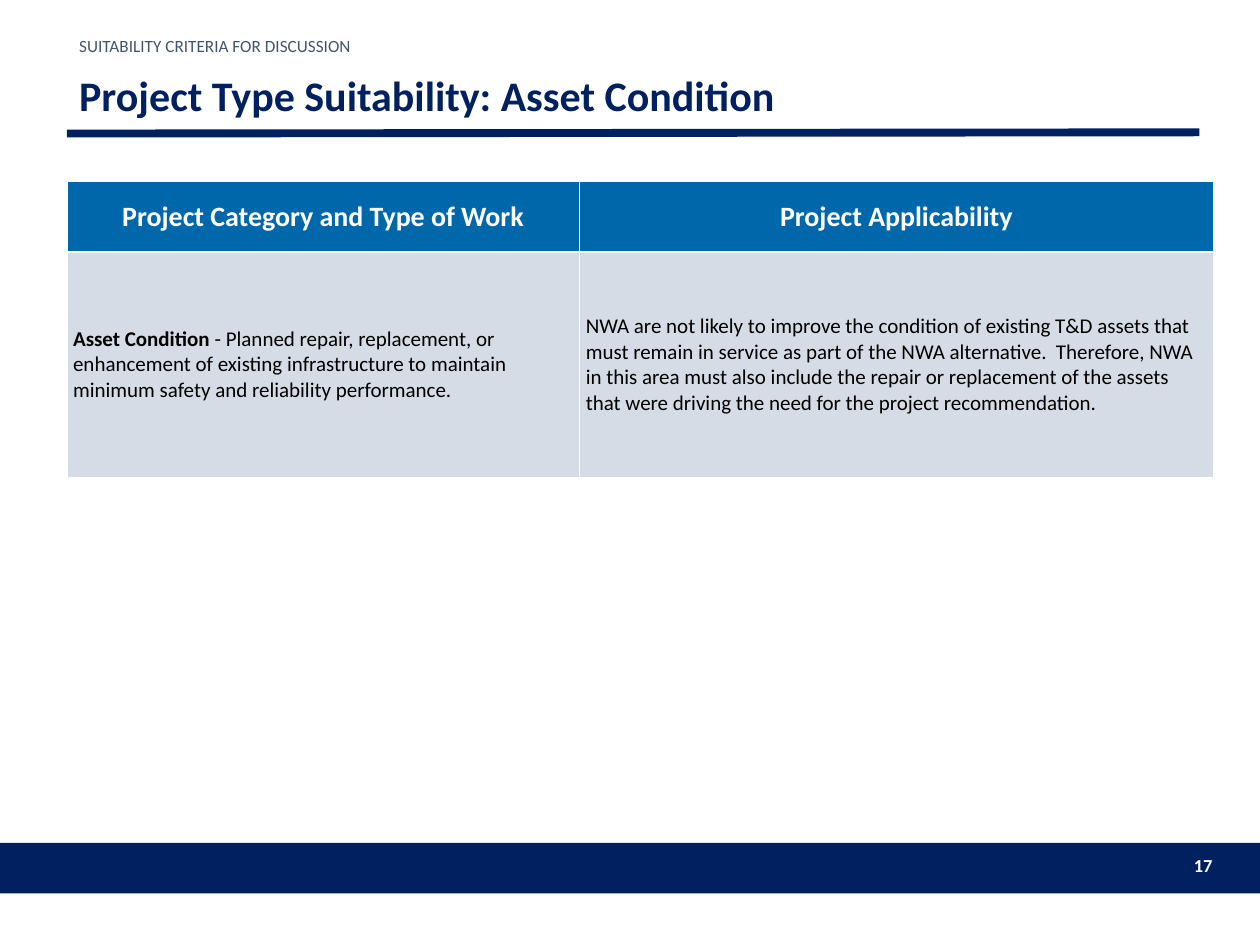
"""Builds the slide on project type suitability for asset condition."""
from lxml import etree
from pptx import Presentation
from pptx.dml.color import RGBColor
from pptx.enum import shapes, text
from pptx.oxml import ns
from pptx.util import Inches, Pt

NAVY = RGBColor(0x00, 0x20, 0x60)
BLUE = RGBColor(0x00, 0x67, 0xAB)
SLATE = RGBColor(0x44, 0x54, 0x6A)
PALE = RGBColor(0xD6, 0xDC, 0xE5)
WHITE = RGBColor(0xFF, 0xFF, 0xFF)
BLACK = RGBColor(0x00, 0x00, 0x00)
FONT = "Calibri"
LEFT = 0.53

SECTION = "SUITABILITY CRITERIA FOR DISCUSSION"
TITLE = "Project Type Suitability: Asset Condition"
PAGE_NUMBER = "17"
COLUMN_WIDTHS = [4.07, 5.03]
ROW_HEIGHTS = [0.56, 1.79]
HEADERS = ["Project Category and Type of Work", "Project Applicability"]
DETAILS = [
    [("Asset Condition ", True),
     ("- Planned repair, replacement, or enhancement of existing infrastructure "
      "to maintain minimum safety and reliability performance.", False)],
    [("NWA are not likely to improve the condition of existing T&D assets that must "
      "remain in service as part of the NWA alternative.  Therefore, NWA in this area "
      "must also include the repair or replacement of the assets that were driving "
      "the need for the project recommendation.", False)],
]


def add_run(paragraph, words, size, color, bold=False):
    run = paragraph.add_run()
    run.text = words
    run.font.name = FONT
    run.font.size = Pt(size)
    run.font.bold = bold
    run.font.color.rgb = color


def add_text(slide, box, words, size, color, bold=False, spacing=None,
             align=text.PP_ALIGN.LEFT, anchor=text.MSO_ANCHOR.TOP):
    frame = slide.shapes.add_textbox(*map(Inches, box)).text_frame
    frame.word_wrap = True
    frame.vertical_anchor = anchor
    paragraph = frame.paragraphs[0]
    paragraph.alignment = align
    paragraph.line_spacing = spacing
    add_run(paragraph, words, size, color, bold)


def fill_cell(cell, runs, size, color, fill, align):
    cell.vertical_anchor = text.MSO_ANCHOR.MIDDLE
    paragraph = cell.text_frame.paragraphs[0]
    paragraph.alignment = align
    for words, bold in runs:
        add_run(paragraph, words, size, color, bold)
    properties = cell._tc.get_or_add_tcPr()
    for side in ("lnL", "lnR", "lnT", "lnB"):
        border = etree.SubElement(properties, ns.qn(f"a:{side}"), w=str(Pt(1)))
        solid = etree.SubElement(border, ns.qn("a:solidFill"))
        etree.SubElement(solid, ns.qn("a:srgbClr"), val=str(WHITE))
    cell.fill.solid()
    cell.fill.fore_color.rgb = fill


def add_frame(slide):
    footer = slide.shapes.add_shape(shapes.MSO_SHAPE.RECTANGLE, 0, Inches(6.69),
                                    Inches(10), Inches(0.4))
    footer.shadow.inherit = False
    footer.fill.solid()
    footer.fill.fore_color.rgb = NAVY
    footer.line.fill.background()
    add_text(slide, (9.31, 6.73, 0.41, 0.29), PAGE_NUMBER, 10.5, WHITE, True,
             align=text.PP_ALIGN.RIGHT)
    rule = slide.shapes.add_connector(shapes.MSO_CONNECTOR.STRAIGHT, Inches(LEFT),
                                      Inches(1.06), Inches(9.52), Inches(1.05))
    rule.line.color.rgb = NAVY
    rule.line.width = Pt(4.5)
    etree.SubElement(rule._element.spPr, ns.qn("a:effectLst"))


def add_suitability_table(slide):
    table = slide.shapes.add_table(
        len(ROW_HEIGHTS), len(COLUMN_WIDTHS), Inches(LEFT), Inches(1.44),
        Inches(sum(COLUMN_WIDTHS)), Inches(sum(ROW_HEIGHTS))).table
    for row, height in zip(table.rows, ROW_HEIGHTS):
        row.height = Inches(height)
    for index, width in enumerate(COLUMN_WIDTHS):
        table.columns[index].width = Inches(width)
        fill_cell(table.cell(0, index), [(HEADERS[index], True)], 16, WHITE, BLUE,
                  text.PP_ALIGN.CENTER)
        detail = table.cell(1, index)
        detail.margin_left = detail.margin_right = Inches(0.05)
        detail.margin_top = detail.margin_bottom = Inches(0.05)
        fill_cell(detail, DETAILS[index], 12, BLACK, PALE, text.PP_ALIGN.LEFT)


def main():
    presentation = Presentation()
    presentation.slide_width, presentation.slide_height = Inches(10), Inches(7.5)
    slide = presentation.slides.add_slide(presentation.slide_layouts[6])
    add_frame(slide)
    add_text(slide, (LEFT, 0.5, 8.99, 0.55), TITLE, 24, NAVY, True, 0.9,
             anchor=text.MSO_ANCHOR.MIDDLE)
    add_text(slide, (LEFT, 0.28, 8.99, 0.22), SECTION, 9.8, SLATE, spacing=0.7)
    add_suitability_table(slide)
    presentation.save("out.pptx")


if __name__ == "__main__":
    main()
